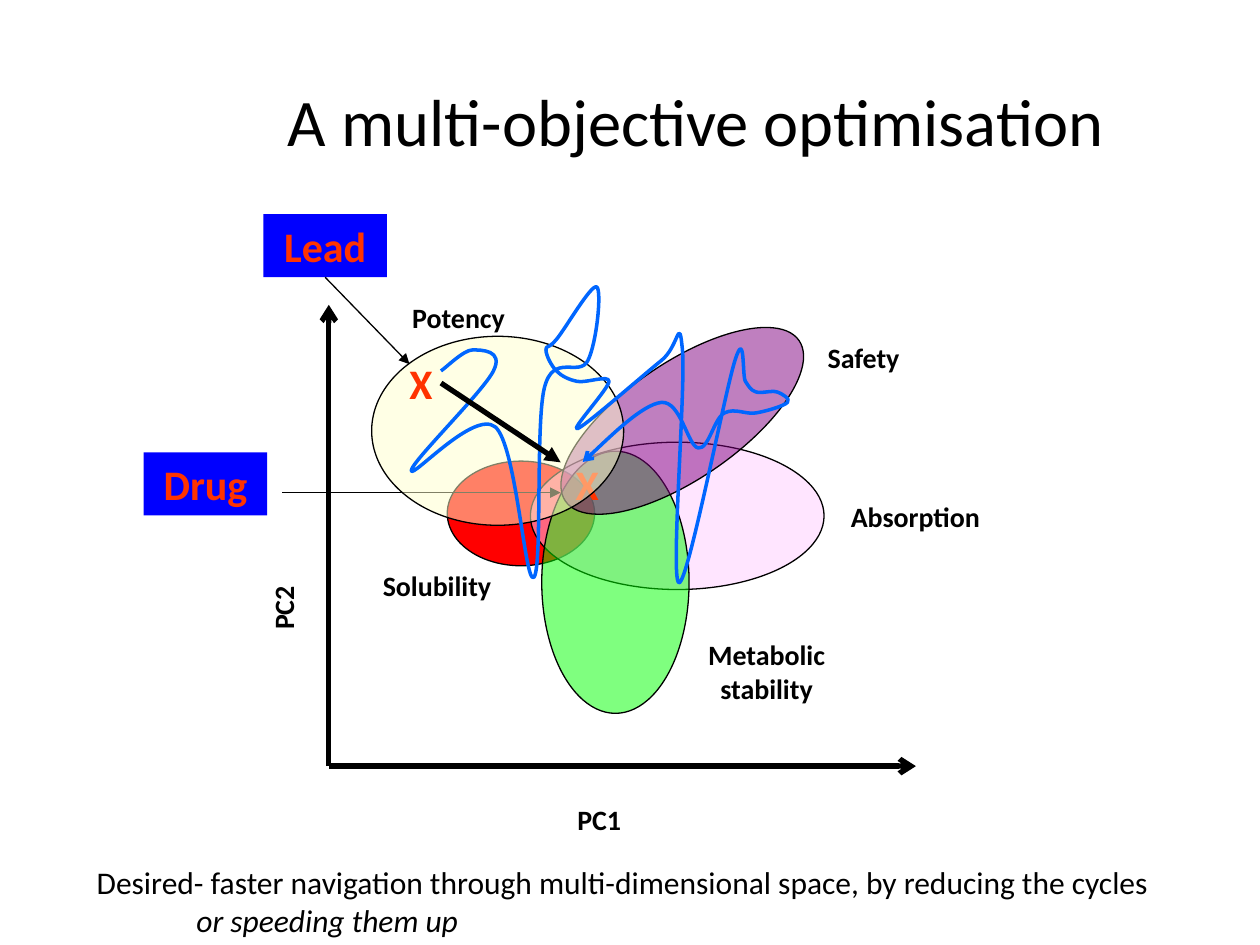
import pptx
import pptx.dml.color
import pptx.enum.shapes
import pptx.enum.text
import pptx.oxml
import pptx.oxml.ns
import pptx.util

Pt = pptx.util.Pt
qn = pptx.oxml.ns.qn

BLACK, WHITE, ORANGE, BLUE, SKY = "000000", "FFFFFF", "FF3300", "0000FF", "0066FF"
FONT = "Calibri"
THIN, THICK = 0.75, 3
LABEL_SIZE, LABEL_HEIGHT = 16, 26.6
COMPOUND_SIZE, COMPOUND_HEIGHT = 24, 36
TAG_WIDTH, MARKER_WIDTH = 70.6, 30.2
ORIGIN_X, ORIGIN_Y = 187.9, 437.8
AXIS_TOP, AXIS_RIGHT = 174.2, 523.4

SOLUBILITY = dict(region=(255.6, 263.5, 84.2, 59.8), colour="FF0000", opacity=100,
                  name=["Solubility"], place=(206.6, 321.1, 86.4, LABEL_HEIGHT))
ABSORPTION = dict(region=(303.1, 252.7, 167.8, 84.2), colour="FFCCFF",
                  name=["Absorption"], place=(473, 281.5, 100.1, LABEL_HEIGHT))
METABOLISM = dict(region=(309.6, 257.8, 84.2, 149.8), colour="00FF00",
                  name=["Metabolic", "stability"], place=(393.8, 360.7, 88.6, 46.1))
SAFETY = dict(region=(308.9, 207.4, 162, 66.2), colour="800080", rotation=325.5,
              name=["Safety"], place=(462.2, 190.8, 62.6, LABEL_HEIGHT))
POTENCY = dict(region=(212.4, 192.2, 144, 108), colour="FFFFCC",
               name=["Potency"], place=(223.9, 167.8, 76.3, LABEL_HEIGHT))

SEARCH_STOPS = [
    (252, 212), (270, 200), (282, 212), (235, 269), (283, 244), (305, 330),
    (311, 222), (336, 206), (341, 164), (318, 194), (312, 200), (318, 212),
    (330, 218), (348, 218), (330, 245), (378, 206), (390, 200), (388, 333),
    (420, 206), (426, 218), (432, 224), (444, 224), (450, 230), (432, 236),
    (414, 236), (399, 256), (378, 230), (333, 264),
]


def rgb(colour):
    """Return the colour for a hex string."""
    return pptx.dml.color.RGBColor.from_string(colour)


def append_xml(parent, tag, **attributes):
    """Append a drawing element with the given attributes and return it."""
    child = pptx.oxml.parse_xml(f'<a:{tag} {pptx.oxml.ns.nsdecls("a")}/>')
    for key, value in attributes.items():
        child.set(key, str(value))
    parent.append(child)
    return child


def set_fill(shape, colour, opacity=100):
    """Fill a shape, with an opacity in percent."""
    shape.fill.solid()
    shape.fill.fore_color.rgb = rgb(colour)
    if opacity < 100:
        solid = shape.element.spPr.find(qn("a:solidFill"))
        append_xml(solid[0], "alpha", val=opacity * 1000)


def set_line(shape, colour, width, head=None):
    """Set colour, width and an optional arrowhead of a line."""
    shape.line.color.rgb = rgb(colour)
    shape.line.width = Pt(width)
    if head:
        append_xml(shape.element.spPr.find(qn("a:ln")), "tailEnd", type=head)


def add_run(paragraph, text, size, colour=BLACK, bold=False, italic=False):
    """Add one run of text to a paragraph."""
    run = paragraph.add_run()
    run.text = text
    run.font.name = FONT
    run.font.size = Pt(size)
    run.font.bold = bold
    run.font.italic = italic
    run.font.color.rgb = rgb(colour)


def add_label(slide, place, lines, size=LABEL_SIZE, colour=BLACK, bold=True, rotation=0):
    """Add centred lines of text and return their box."""
    label = slide.shapes.add_textbox(*map(Pt, place))
    label.rotation = rotation
    frame = label.text_frame
    frame.word_wrap = False
    frame.vertical_anchor = pptx.enum.text.MSO_ANCHOR.MIDDLE
    for number, line in enumerate(lines):
        paragraph = frame.add_paragraph() if number else frame.paragraphs[0]
        paragraph.alignment = pptx.enum.text.PP_ALIGN.CENTER
        add_run(paragraph, line, size, colour, bold)
    return label


def add_property(slide, region, colour, name, place, opacity=50, rotation=0):
    """Add the region where one property is good, and its name."""
    oval = slide.shapes.add_shape(pptx.enum.shapes.MSO_SHAPE.OVAL, *map(Pt, region))
    oval.shadow.inherit = False
    oval.rotation = rotation
    set_fill(oval, colour, opacity)
    set_line(oval, BLACK, THIN)
    add_label(slide, place, name)


def add_compound(slide, name, tag_at, marker_at):
    """Mark a compound with an X and name it on a blue tag."""
    add_label(slide, (*marker_at, MARKER_WIDTH, COMPOUND_HEIGHT), ["X"],
              COMPOUND_SIZE, ORANGE)
    tag = add_label(slide, (*tag_at, TAG_WIDTH, COMPOUND_HEIGHT), [name],
                    COMPOUND_SIZE, ORANGE)
    set_fill(tag, BLUE)


def add_arrow(slide, start, end, width=THIN, head="triangle"):
    """Add a straight black arrow."""
    arrow = slide.shapes.add_connector(
        pptx.enum.shapes.MSO_CONNECTOR.STRAIGHT, *map(Pt, start + end))
    set_line(arrow, BLACK, width, head)
    append_xml(arrow.element.spPr, "effectLst")


def add_axes(slide):
    """Add both axes from their common origin, with their names."""
    for tip in [(ORIGIN_X, AXIS_TOP), (AXIS_RIGHT, ORIGIN_Y)]:
        add_arrow(slide, (ORIGIN_X, ORIGIN_Y), tip, THICK, "arrow")
    add_label(slide, (319.7, 455, 45.4, LABEL_HEIGHT), ["PC1"])
    add_label(slide, (139, 334.1, 45.4, LABEL_HEIGHT), ["PC2"], rotation=270)


def smooth_controls(stops):
    """Return Bezier points whose tangent at a stop joins its two neighbours."""
    padded = [stops[0], *stops, stops[-1]]
    controls = []
    for before, start, end, after in zip(padded, padded[1:], padded[2:], padded[3:]):
        leave = tuple(s + (e - b) / 6 for b, s, e in zip(before, start, end))
        arrive = tuple(e - (a - s) / 6 for s, e, a in zip(start, end, after))
        controls += [leave, arrive, end]
    return controls


def add_search(slide):
    """Add the winding search as a smooth arrow through its stops."""
    builder = slide.shapes.build_freeform(*SEARCH_STOPS[0], scale=Pt(1))
    builder.add_line_segments(smooth_controls(SEARCH_STOPS), close=False)
    search = builder.convert_to_shape()
    search.shadow.inherit = False
    search.fill.background()
    set_line(search, SKY, 2, "arrow")
    route = next(search.element.iter(qn("a:path")))
    steps = route.findall(qn("a:lnTo"))
    for first in range(0, len(steps), 3):
        curve = append_xml(route, "cubicBezTo")
        for step in steps[first:first + 3]:
            curve.append(step[0])
            route.remove(step)


def add_conclusion(slide):
    """Add the closing statement with its indented second line."""
    conclusion = slide.shapes.add_textbox(Pt(48.2), Pt(489.6), Pt(671.8), Pt(50.4))
    set_fill(conclusion, WHITE)
    frame = conclusion.text_frame
    frame.word_wrap = True
    add_run(frame.paragraphs[0], "Desired- faster navigation through "
            "multi-dimensional space, by reducing the cycles", 18)
    alternative = frame.add_paragraph()
    alternative._p.get_or_add_pPr().set("marL", str(Pt(57)))
    add_run(alternative, "or speeding them up", 18, italic=True)


def main():
    """Build the slide and save it."""
    deck = pptx.Presentation()
    deck.slide_width, deck.slide_height = Pt(720), Pt(540)
    slide = deck.slides.add_slide(deck.slide_layouts[6])

    for quality in (SOLUBILITY, ABSORPTION, METABOLISM, SAFETY):
        add_property(slide, **quality)
    add_compound(slide, "Drug", tag_at=(82.1, 258.5), marker_at=(320.4, 258.5))
    add_arrow(slide, (161.3, 281.5), (320.4, 281.5))
    add_axes(slide)
    add_property(slide, **POTENCY)
    add_compound(slide, "Lead", tag_at=(150.5, 122.4), marker_at=(225.4, 200.9))
    add_search(slide)
    add_arrow(slide, (185.8, 158.4), (234, 208.1))
    add_label(slide, (121.7, 37.4, 552.2, 61.9),
              ["A multi-objective optimisation"], size=38, bold=False)
    add_arrow(slide, (252, 218.9), (320.4, 264.2), THICK)
    add_conclusion(slide)
    deck.save("out.pptx")


if __name__ == "__main__":
    main()
